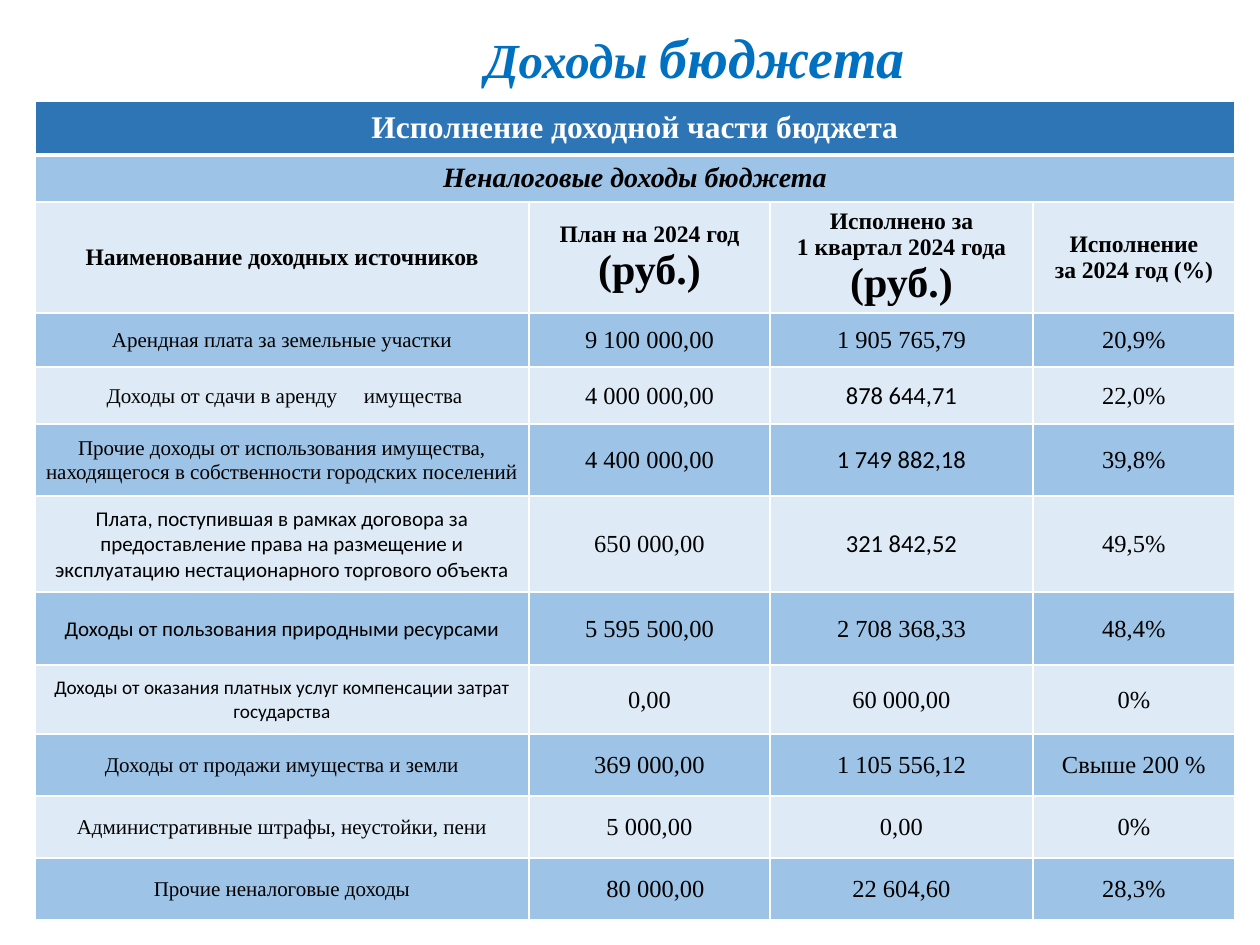
from lxml.etree import SubElement
from pptx import Presentation
from pptx.dml.color import RGBColor
from pptx.enum.text import MSO_ANCHOR, MSO_AUTO_SIZE, PP_ALIGN
from pptx.oxml import parse_xml
from pptx.oxml.ns import nsdecls, qn
from pptx.util import Emu, Pt

PX = 914400 // 126
SERIF, SANS = "Times New Roman", "Calibri"
COLORS = {
    "title": "0070C0", "outline": "4472C4", "heading": "2E75B6",
    "dark": "9DC3E6", "light": "DEEBF7", "white": "FFFFFF", "black": "000000",
}
COLUMN_WIDTHS = [494, 241, 263, 202]
ROW_HEIGHTS = [54, 47, 92, 54, 57, 72, 96, 73, 69, 62, 62, 62]

# Column headings: lines at the normal size, then an optional large unit
HEADINGS = [
    (["Наименование доходных источников"], None),
    (["План на 2024 год"], "(руб.)"),
    (["Исполнено за", "1 квартал 2024 года"], "(руб.)"),
    (["Исполнение", "за 2024 год (%)"], None),
]

# Name, plan, actual, share, then any departures from the usual format
INCOME = [
    ("Арендная плата за земельные участки", "9 100 000,00", "1 905 765,79", "20,9%", {}),
    ("Доходы от сдачи в аренду имущества", "4 000 000,00", "878 644,71", "22,0%",
     {"actual_font": SANS, "wide_gap": True, "name_left": 6}),
    ("Прочие доходы от использования имущества, находящегося в собственности "
     "городских поселений", "4 400 000,00", "1 749 882,18", "39,8%", {"actual_font": SANS}),
    ("Плата, поступившая в рамках договора за предоставление права на размещение и "
     "эксплуатацию нестационарного торгового объекта", "650 000,00", "321 842,52", "49,5%",
     {"name_font": SANS, "actual_font": SANS}),
    ("Доходы от пользования природными ресурсами", "5 595 500,00", "2 708 368,33", "48,4%",
     {"name_font": SANS}),
    ("Доходы от оказания платных услуг компенсации затрат государства",
     "0,00", "60 000,00", "0%", {"name_font": SANS, "name_size": 11}),
    ("Доходы от продажи имущества и земли", "369 000,00", "1 105 556,12", "Свыше 200 %", {}),
    ("Административные штрафы, неустойки, пени", "5 000,00", "0,00", "0%", {}),
    ("Прочие неналоговые доходы", "80 000,00", "22 604,60", "28,3%", {"plan_left": 13}),
]


def px(value):
    return Emu(value * PX)


def add_text(para, text, size=14, font=SERIF, color="black", bold=False, italic=False,
             spacing=None):
    para.alignment = PP_ALIGN.CENTER
    span = para.add_run()
    span.text = text
    span.font.size = Pt(size)
    span.font.name = font
    span.font.bold = bold
    span.font.italic = italic
    span.font.color.rgb = RGBColor.from_string(COLORS[color])
    if spacing:
        span.font._element.set("spc", str(spacing * 100))
    return span


def outline_text(span, color, width):
    line = parse_xml(
        f'<a:ln {nsdecls("a")} w="{Pt(width)}"><a:solidFill>'
        f'<a:srgbClr val="{COLORS[color]}"/></a:solidFill></a:ln>')
    span.font._element.insert(0, line)


def style_cell(cell, fill, bottom=1):
    # Borders come before the fill in the cell properties
    properties = cell._tc.get_or_add_tcPr()
    for side, width in (("L", 1), ("R", 1), ("T", 1), ("B", bottom)):
        border = SubElement(properties, qn(f"a:ln{side}"), w=str(Pt(width)))
        solid = SubElement(border, qn("a:solidFill"))
        SubElement(solid, qn("a:srgbClr"), val=COLORS["white"])
    cell.fill.solid()
    cell.fill.fore_color.rgb = RGBColor.from_string(COLORS[fill])
    cell.vertical_anchor = MSO_ANCHOR.MIDDLE


def tighten(cell, left=1):
    cell.margin_left = px(left)
    cell.margin_right = cell.margin_top = px(1)
    cell.margin_bottom = 0


def add_title(page):
    box = page.shapes.add_textbox(px(402), px(16), px(586), px(81))
    frame = box.text_frame
    frame.word_wrap = True
    frame.auto_size = MSO_AUTO_SIZE.SHAPE_TO_FIT_TEXT
    for text, size in (("Доходы ", 28), ("бюджета", 32)):
        span = add_text(frame.paragraphs[0], text, size=size, color="title",
                        bold=True, italic=True)
        outline_text(span, "outline", 0.8)


def add_band(table, row, text, fill, bottom=1, **text_format):
    for cell in table.rows[row].cells:
        style_cell(cell, fill, bottom)
    first = table.cell(row, 0)
    first.merge(table.cell(row, len(COLUMN_WIDTHS) - 1))
    add_text(first.text_frame.paragraphs[0], text, bold=True, **text_format)


def add_headings(table, row):
    for cell, (lines, unit) in zip(table.rows[row].cells, HEADINGS):
        style_cell(cell, "light")
        para = cell.text_frame.paragraphs[0]
        for number, line in enumerate(lines):
            if number:
                para.add_line_break()
            add_text(para, line, size=13.5, bold=True)
        if unit:
            add_text(cell.text_frame.add_paragraph(), unit, size=24, bold=True)


def add_income(table, row, fill, name, plan, actual, share, options):
    cells = list(table.rows[row].cells)
    lefts = [options.get("name_left", 1), options.get("plan_left", 1), 1, 1]
    for cell, left in zip(cells, lefts):
        style_cell(cell, fill)
        tighten(cell, left)
    paras = [cell.text_frame.paragraphs[0] for cell in cells]

    name_format = {"size": options.get("name_size", 12),
                   "font": options.get("name_font", SERIF)}
    if options.get("wide_gap"):
        start, end = name.rsplit(" ", 1)
        add_text(paras[0], start, **name_format)
        add_text(paras[0], " ", spacing=12, **name_format)
        add_text(paras[0], end, **name_format)
    else:
        add_text(paras[0], name, **name_format)
    add_text(paras[1], plan)
    add_text(paras[2], actual, font=options.get("actual_font", SERIF))
    add_text(paras[3], share)


def add_income_table(page):
    frame = page.shapes.add_table(
        len(ROW_HEIGHTS), len(COLUMN_WIDTHS), px(35), px(101),
        px(sum(COLUMN_WIDTHS)), px(sum(ROW_HEIGHTS)))
    table = frame.table
    for column, width in zip(table.columns, COLUMN_WIDTHS):
        column.width = px(width)
    for row, height in zip(table.rows, ROW_HEIGHTS):
        row.height = px(height)

    add_band(table, 0, "Исполнение доходной части бюджета", "heading", bottom=3,
             size=18, color="white")
    add_band(table, 1, "Неналоговые доходы бюджета", "dark", size=16, italic=True)
    add_headings(table, 2)
    for number, entry in enumerate(INCOME):
        add_income(table, number + 3, "light" if number % 2 else "dark", *entry)


def main():
    deck = Presentation()
    deck.slide_width, deck.slide_height = px(1260), px(945)
    page = deck.slides.add_slide(deck.slide_layouts[6])
    add_income_table(page)
    add_title(page)
    deck.save("out.pptx")


if __name__ == "__main__":
    main()
